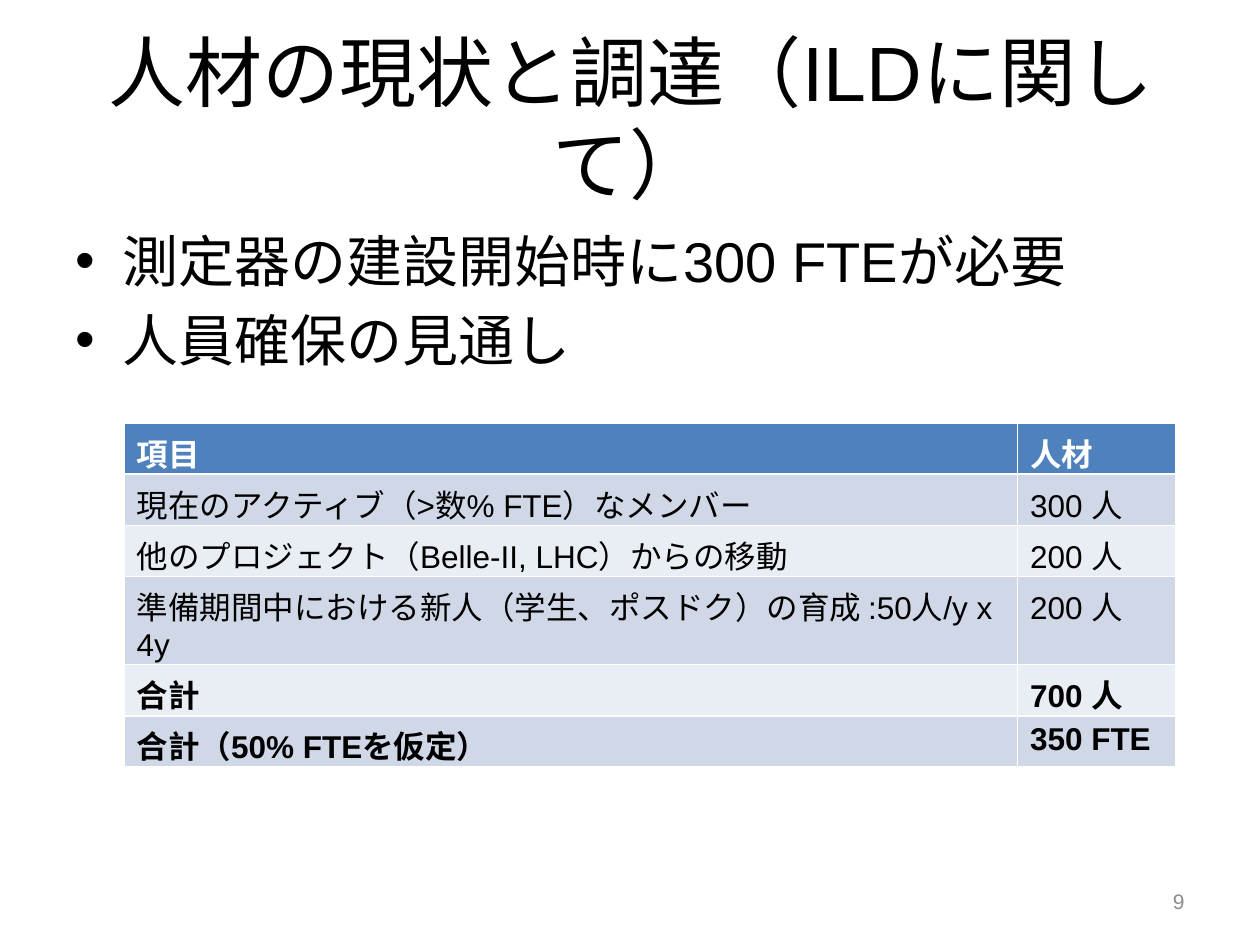
from dataclasses import dataclass

from lxml.etree import SubElement
from pptx import Presentation
from pptx.dml.color import RGBColor
from pptx.enum.text import MSO_ANCHOR, PP_ALIGN
from pptx.oxml.ns import qn
from pptx.util import Cm, Pt


@dataclass(frozen=True)
class Theme:
    font: str = "Arial"
    black: str = "000000"
    white: str = "FFFFFF"
    gray: str = "8C8C8C"
    header: str = "4F81BD"
    bands: tuple = ("D0D8E8", "E9EDF4")
    title_size: int = 44
    body_size: int = 32
    table_size: int = 18
    number_size: int = 12


theme = Theme()


def style(paragraph, size, color, bold=False):
    font = paragraph.font
    font.name = theme.font
    font.size = Pt(size)
    font.bold = bold
    font.color.rgb = RGBColor.from_string(color)


def add_text(slide, box, lines, size, color, align, anchor):
    shape = slide.shapes.add_textbox(*(Cm(length) for length in box))
    frame = shape.text_frame
    frame.word_wrap = True
    frame.vertical_anchor = anchor
    frame.text = "\n".join(lines)
    for paragraph in frame.paragraphs:
        paragraph.alignment = align
        style(paragraph, size, color)
    return frame


presentation = Presentation()
presentation.slide_width = Cm(25.4)
presentation.slide_height = Cm(19.05)
slide = presentation.slides.add_slide(presentation.slide_layouts[6])

# Title
add_text(slide, (1.27, 0.76, 22.86, 3.18), ["人材の現状と調達（ILDに関して）"],
         theme.title_size, theme.black, PP_ALIGN.CENTER, MSO_ANCHOR.MIDDLE)

# Bullets
body = add_text(slide, (1.27, 4.45, 22.86, 12.57),
                ["測定器の建設開始時に300 FTEが必要", "人員確保の見通し"],
                theme.body_size, theme.black, PP_ALIGN.LEFT, MSO_ANCHOR.TOP)
for paragraph in body.paragraphs:
    paragraph.space_before = Pt(0.2 * theme.body_size)
    properties = paragraph._p.get_or_add_pPr()
    properties.set("marL", str(Cm(0.95)))
    properties.set("indent", str(-Cm(0.95)))
    SubElement(properties, qn("a:buFont"), typeface=theme.font)
    SubElement(properties, qn("a:buChar"), char="•")

# Staffing table: header, banded rows, bold totals
rows = [
    ("項目", "人材"),
    ("現在のアクティブ（>数% FTE）なメンバー", "300 人"),
    ("他のプロジェクト（Belle-II, LHC）からの移動", "200 人"),
    ("準備期間中における新人（学生、ポスドク）の育成 :50人/y x 4y", "200 人"),
    ("合計", "700 人"),
    ("合計（50% FTEを仮定）", "350 FTE"),
]
bold_rows = (0, 4, 5)
column_widths = (Cm(18.01), Cm(3.2))
table = slide.shapes.add_table(len(rows), len(column_widths), Cm(2.5), Cm(8.53),
                               sum(column_widths), Cm(1.03) * len(rows)).table
for column, width in zip(table.columns, column_widths):
    column.width = width
for row_index, row in enumerate(rows):
    is_header = row_index == 0
    fill = theme.header if is_header else theme.bands[(row_index - 1) % 2]
    for column_index, text in enumerate(row):
        cell = table.cell(row_index, column_index)
        cell.text = text
        cell.fill.solid()
        cell.fill.fore_color.rgb = RGBColor.from_string(fill)
        style(cell.text_frame.paragraphs[0], theme.table_size,
              theme.white if is_header else theme.black, row_index in bold_rows)

# Slide number
add_text(slide, (18.2, 17.66, 5.93, 1.01), ["9"],
         theme.number_size, theme.gray, PP_ALIGN.RIGHT, MSO_ANCHOR.MIDDLE)

presentation.save("out.pptx")
